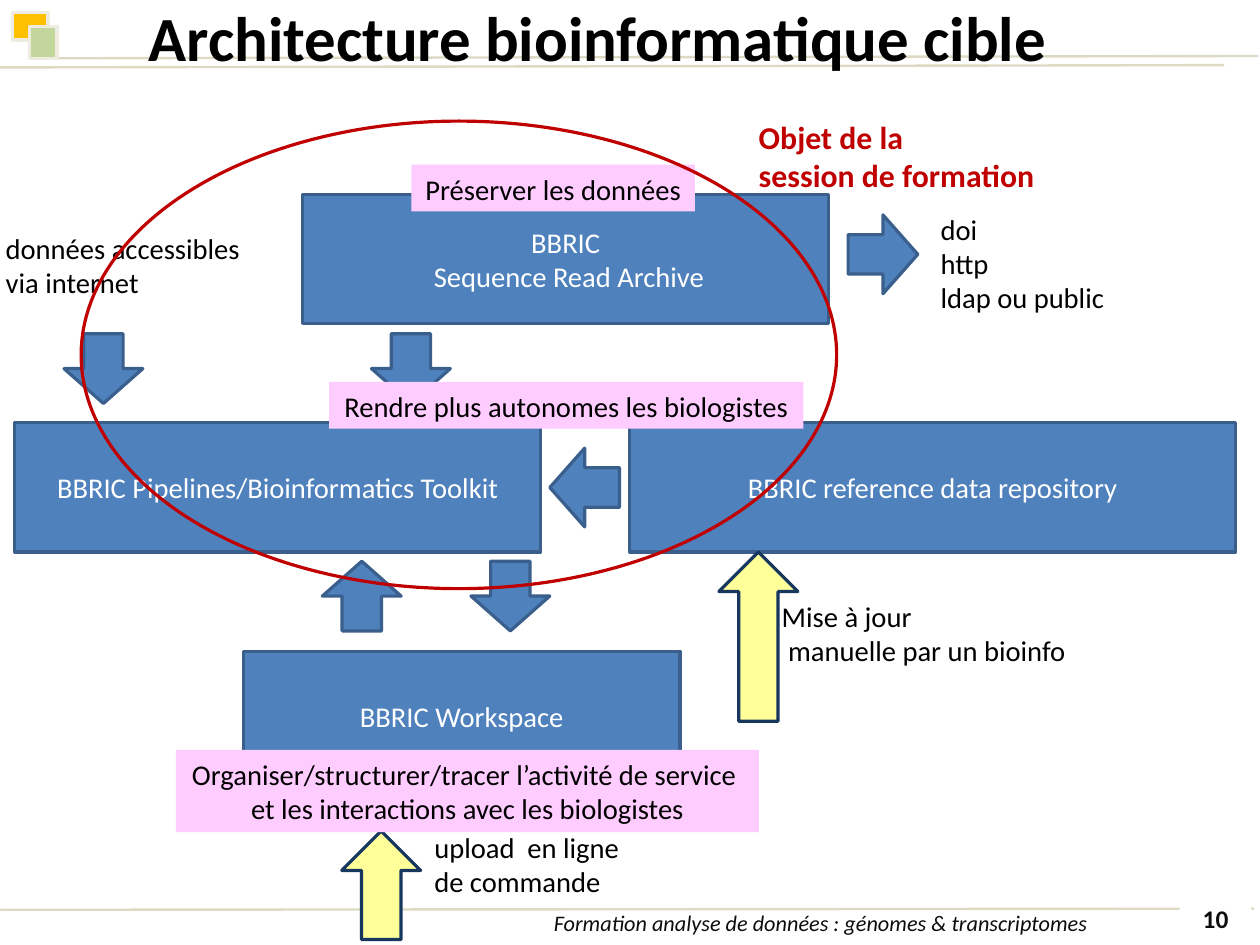
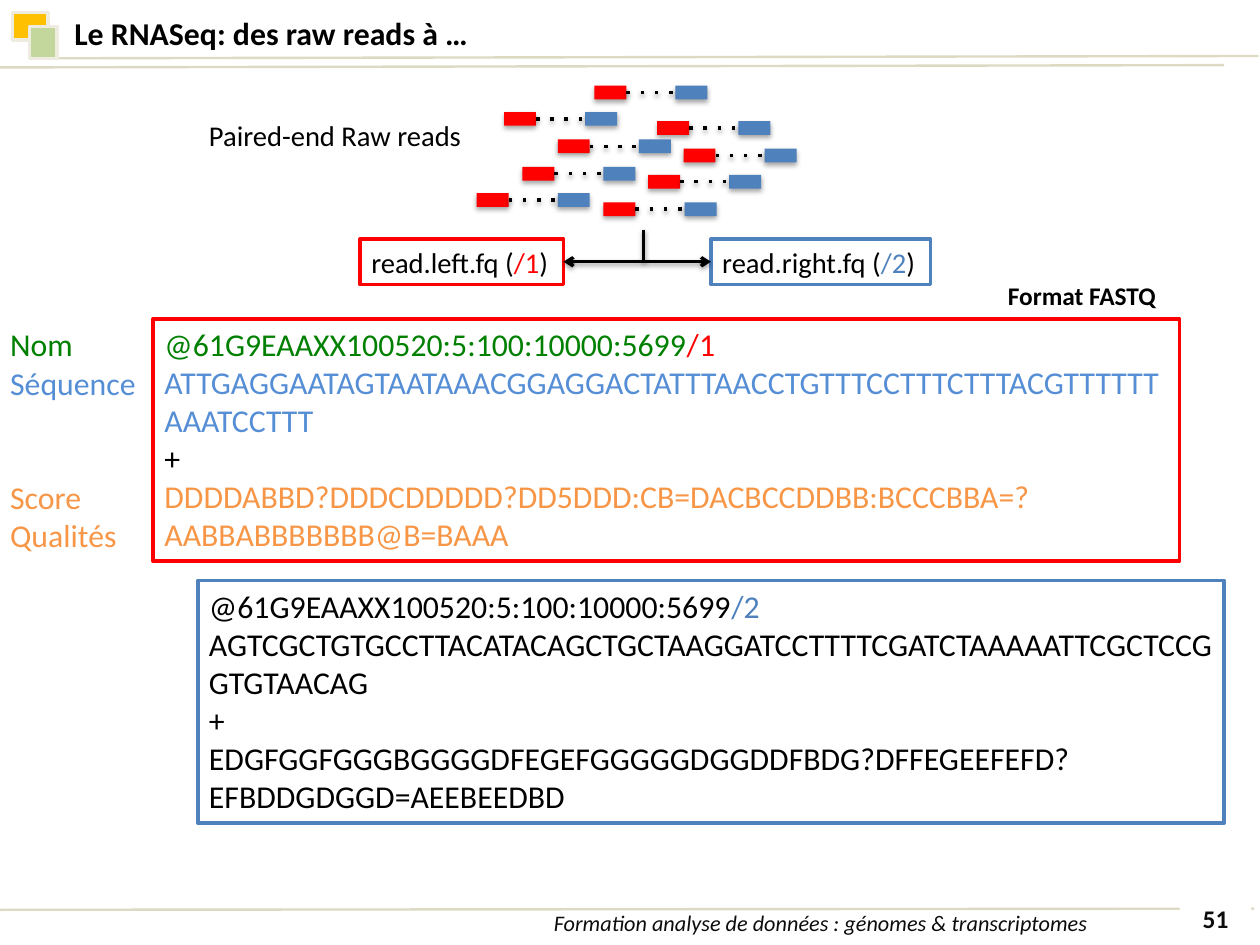
from lxml.etree import SubElement
from pptx import Presentation
from pptx.dml.color import RGBColor
from pptx.enum.shapes import MSO_CONNECTOR as Connector, MSO_SHAPE as Shape
from pptx.enum.text import MSO_ANCHOR as Anchor, MSO_AUTO_SIZE as AutoSize, PP_ALIGN as Align
from pptx.oxml.ns import qn
from pptx.util import Cm, Inches, Pt

FONT = "Calibri"
COLORS = {
    "black": "000000", "white": "FFFFFF", "footer": "0D0D0D", "rule": "DDD9C3",
    "gold": "FFC000", "sage": "C3D69B", "cream": "EEECE1",
    "blue": "4F81BD", "blue_edge": "3A5F8C", "yellow": "FFFF99", "navy": "17375E",
    "pink": "FFCCFF", "crimson": "C00000", "red": "FF0000",
    "green": "008000", "sky": "558ED5", "orange": "F79646",
}
WIDE_INSETS = (0.11, 0.06)
SLIM_INSETS = (0.1, 0.05)


def rgb(color):
    return RGBColor.from_string(COLORS[color])


def write_text(shape, paragraphs, size, color="black", bold=False, italic=False,
               align=Align.LEFT, anchor=Anchor.TOP, insets=SLIM_INSETS,
               wrap=True, grow=False, spacing=None):
    """Fill a shape; a paragraph is a string or a list of (text, color) runs."""
    frame = shape.text_frame
    frame.word_wrap = wrap
    frame.auto_size = AutoSize.SHAPE_TO_FIT_TEXT if grow else AutoSize.NONE
    frame.vertical_anchor = anchor
    frame.margin_left = frame.margin_right = Inches(insets[0])
    frame.margin_top = frame.margin_bottom = Inches(insets[1])
    for index, content in enumerate(paragraphs):
        paragraph = frame.add_paragraph() if index else frame.paragraphs[0]
        paragraph.alignment = align
        if spacing:
            paragraph.line_spacing = spacing
        font = paragraph.font
        font.name, font.size, font.bold, font.italic = FONT, Pt(size), bold, italic
        font.color.rgb = rgb(color)
        runs = [(content, color)] if isinstance(content, str) else content
        for text, run_color in runs:
            run = paragraph.add_run()
            run.text = text
            if run_color != color:
                run.font.color.rgb = rgb(run_color)


def add_box(shapes, box, fill=None, line=None, width=2, kind=Shape.RECTANGLE, rotation=0):
    shape = shapes.add_shape(kind, *map(Inches, box))
    shape.rotation = rotation
    if fill:
        shape.fill.solid()
        shape.fill.fore_color.rgb = rgb(fill)
    else:
        shape.fill.background()
    if line:
        shape.line.color.rgb = rgb(line)
        shape.line.width = Pt(width)
    else:
        shape.line.fill.background()
    shape.shadow.inherit = False
    return shape


def add_caption(slide, box, paragraphs, size=18, wrap=False, **style):
    caption = slide.shapes.add_textbox(*map(Inches, box))
    write_text(caption, paragraphs, size, wrap=wrap, grow=True, **style)


def add_shadow(effects, alpha, distance):
    shadow = SubElement(effects, qn("a:outerShdw"), blurRad=str(Pt(3.1)),
                        dist=str(Pt(distance)), dir="5400000", rotWithShape="0")
    color = SubElement(shadow, qn("a:srgbClr"), val=COLORS["black"])
    SubElement(color, qn("a:alpha"), val=str(alpha * 1000))


def add_line(shapes, start, end, color="black", width=2, dash=None, heads=(), shadow=False):
    line = shapes.add_connector(Connector.STRAIGHT, *map(Inches, start + end))
    line.line.color.rgb = rgb(color)
    line.line.width = Pt(width)
    properties = line.element.spPr
    outline = properties.find(qn("a:ln"))
    if dash:
        SubElement(outline, qn("a:prstDash"), val=dash)
    for head in heads:
        SubElement(outline, qn(head), type="arrow")
    effects = SubElement(properties, qn("a:effectLst"))
    if shadow:
        add_shadow(effects, 38, 1.6)


def add_slide(presentation, title, title_box, title_size, number):
    """Add a title-only slide with the shared rules, corner mark and footer."""
    slide = presentation.slides.add_slide(presentation.slide_layouts[5])
    shapes = slide.shapes
    add_line(shapes, (0.5, 0.51), (11.01, 0.49), "rule", 1.5)
    add_line(shapes, (-0.01, 0.59), (10.71, 0.57), "rule", 1.5)
    add_box(shapes, (0.11, 0.11, 0.31, 0.24), "gold", "cream")
    add_box(shapes, (0.26, 0.23, 0.24, 0.28), "sage", "cream")
    footer_style = dict(color="footer", align=Align.CENTER, anchor=Anchor.MIDDLE, spacing=0.9)
    footer = add_box(shapes, (3.46, 7.95, 7.4, 0.27), "white")
    write_text(footer, [" Formation analyse de données : génomes & transcriptomes"],
               14, italic=True, **footer_style)
    add_line(shapes, (-0.01, 7.96), (10.97, 7.95), "rule", 1.5)
    page = add_box(shapes, (10.32, 7.91, 0.63, 0.29), "white")
    write_text(page, [number], 16, bold=True, **footer_style)

    heading = shapes.title
    heading.left, heading.top, heading.width, heading.height = map(Inches, title_box)
    write_text(heading, [title], title_size, bold=True, anchor=Anchor.MIDDLE)
    shapes.element.append(heading.element)  # bring the title above the rules
    return slide


def add_module(slide, box, paragraphs):
    module = add_box(slide.shapes, box, "blue", "blue_edge")
    write_text(module, paragraphs, 18, "white", align=Align.CENTER,
               anchor=Anchor.MIDDLE, insets=WIDE_INSETS)


def add_arrow(slide, left, top, rotation=0, height=0.61, fill="blue", line="blue_edge"):
    add_box(slide.shapes, (left, top, 0.69, height), fill, line,
            kind=Shape.DOWN_ARROW, rotation=rotation)


def add_goal(slide, box, paragraphs):
    goal = add_box(slide.shapes, box, "pink")
    write_text(goal, paragraphs, 18, align=Align.CENTER, insets=WIDE_INSETS,
               wrap=False, grow=True)


def add_training_scope(slide, left, top):
    add_box(slide.shapes, (left, top + 0.08, 6.61, 4.09), line="crimson", kind=Shape.OVAL)
    add_caption(slide, (left + 5.83, top, 2.64, 0.77),
                ["Objet de la", "session de formation"], 20, color="crimson", bold=True)


def build_architecture(presentation):
    slide = add_slide(presentation, "Architecture bioinformatique cible",
                      (1.2, -0.03, 9.8, 0.7), 39.6, "10")
    for left, top, width, paragraphs in (
        (2.13, 5.7, 3.82, ["BBRIC Workspace"]),
        (5.51, 3.7, 5.3, ["BBRIC reference data repository"]),
        (2.65, 1.7, 4.6, ["BBRIC", " Sequence Read Archive"]),
        (0.13, 3.7, 4.6, ["BBRIC Pipelines/Bioinformatics Toolkit"]),
    ):
        add_module(slide, (left, top, width, 1.13), paragraphs)
    for left, top, rotation in (
        (3.25, 2.92, 0), (0.56, 2.92, 0), (4.12, 4.91, 0),
        (2.82, 4.91, 180), (4.77, 3.96, 90), (7.38, 1.92, 270),
    ):
        add_arrow(slide, left, top, rotation)
    for left, top, height in ((6.29, 4.83, 1.48), (2.99, 7.27, 0.95)):
        add_arrow(slide, left, top, 180, height, "yellow", "navy")
    for box, paragraphs in (
        ((6.73, 5.18, 2.8, 0.72), ["Mise à jour", " manuelle par un bioinfo"]),
        ((3.69, 7.2, 1.92, 0.72), ["upload  en ligne", "de commande"]),
        ((-0.06, 1.96, 2.35, 0.72), ["données accessibles", "via internet"]),
        ((8.12, 1.79, 1.67, 1.02), ["doi", "http", "ldap ou public"]),
    ):
        add_caption(slide, box, paragraphs, insets=WIDE_INSETS)
    for box, paragraphs in (
        ((3.6, 1.44, 2.48, 0.41), ["Préserver les données"]),
        ((1.54, 6.56, 5.1, 0.72), ["Organiser/structurer/tracer l’activité de service ",
                                   "et les interactions avec les biologistes"]),
        ((2.88, 3.34, 4.15, 0.41), ["Rendre plus autonomes les biologistes"]),
    ):
        add_goal(slide, box, paragraphs)
    add_training_scope(slide, 0.71, 0.98)


def add_read_pair(slide, left, top):
    """Draw two mates joined by a dotted insert, as one group."""
    shapes = slide.shapes.add_group_shape().shapes
    for offset, color in ((0, "red"), (0.71, "blue")):
        mate = add_box(shapes, (left + offset, top, 0.28, 0.12), color)
        add_shadow(mate.element.spPr.find(qn("a:effectLst")), 35, 1.8)
    middle = top + 0.06
    add_line(shapes, (left + 0.28, middle), (left + 0.71, middle),
             width=2.25, dash="dot", shadow=True)


def add_file_split(slide, left, top):
    """Draw the two read files and the forked arrow between them."""
    for offset, width, name, mate, color in (
        (0, 1.78, "read.left.fq (", "/1", "red"),
        (3.07, 1.92, "read.right.fq (", "/2", "blue"),
    ):
        file_box = add_box(slide.shapes, (left + offset, top, width, 0.4), line=color, width=2.25)
        write_text(file_box, [[(name, "black"), (mate, color), (")", "black")]], 18,
                   wrap=False, grow=True)
    stem, middle = left + 2.48, top + 0.2
    add_line(slide.shapes, (stem, top - 0.08), (stem, middle), shadow=True)
    add_line(slide.shapes, (left + 1.78, middle), (left + 3.07, middle),
             heads=("a:headEnd", "a:tailEnd"), shadow=True)


def add_fastq_record(slide, left, top, line, paragraphs):
    record = add_box(slide.shapes, (left, top, 8.98, 2.12), line=line, width=2.25)
    write_text(record, paragraphs, 20, grow=True)


def build_raw_reads(presentation):
    slide = add_slide(presentation, "Le RNASeq: des raw reads à …",
                      (0.55, 0.07, 7.61, 0.44), 20, "51")
    add_caption(slide, (8.72, 2.4, 1.6, 0.37), ["Format FASTQ"], 16, bold=True)
    add_caption(slide, (1.73, 0.98, 2.45, 0.4), ["Paired-end Raw reads"])
    for left, top in (
        (5.2, 0.75), (4.41, 0.98), (5.75, 1.06), (4.88, 1.22), (5.98, 1.3),
        (4.57, 1.46), (5.67, 1.53), (5.28, 1.77), (4.17, 1.69),
    ):
        add_read_pair(slide, left, top)
    add_file_split(slide, 3.15, 2.09)

    for top, width, height, text, color, wrap in (
        (2.79, 0.75, 0.44, "Nom", "green", False),
        (3.13, 1.31, 0.44, "Séquence", "sky", False),
        (4.13, 1.27, 0.79, "Score Qualités", "orange", True),
    ):
        add_caption(slide, (-0.01, top, width, height), [text], 20, color=color, wrap=wrap)
    name = "@61G9EAAXX100520:5:100:10000:5699"
    add_fastq_record(slide, 1.34, 2.79, "red", [
        [(name, "green"), ("/1", "red")],
        [("ATTGAGGAATAGTAATAAACGGAGGACTATTTAACCTGTTTCCTTTCTTTACGTTTTTTAAATCCTTT", "sky")],
        "+",
        [("DDDDABBD?DDDCDDDDD?DD5DDD:CB=DACBCCDDBB:BCCCBBA=?AABBABBBBBBB@B=BAAA", "orange")],
    ])
    add_fastq_record(slide, 1.73, 5.08, "blue", [
        [(name, "black"), ("/2", "blue")],
        "AGTCGCTGTGCCTTACATACAGCTGCTAAGGATCCTTTTCGATCTAAAAATTCGCTCCGGTGTAACAG",
        "+",
        "EDGFGGFGGGBGGGGDFEGEFGGGGGDGGDDFBDG?DFFEGEEFEFD?EFBDDGDGGD=AEEBEEDBD",
    ])


def main():
    presentation = Presentation()
    presentation.slide_width, presentation.slide_height = Cm(28), Cm(21)
    build_architecture(presentation)
    build_raw_reads(presentation)
    presentation.save("out.pptx")


if __name__ == "__main__":
    main()
